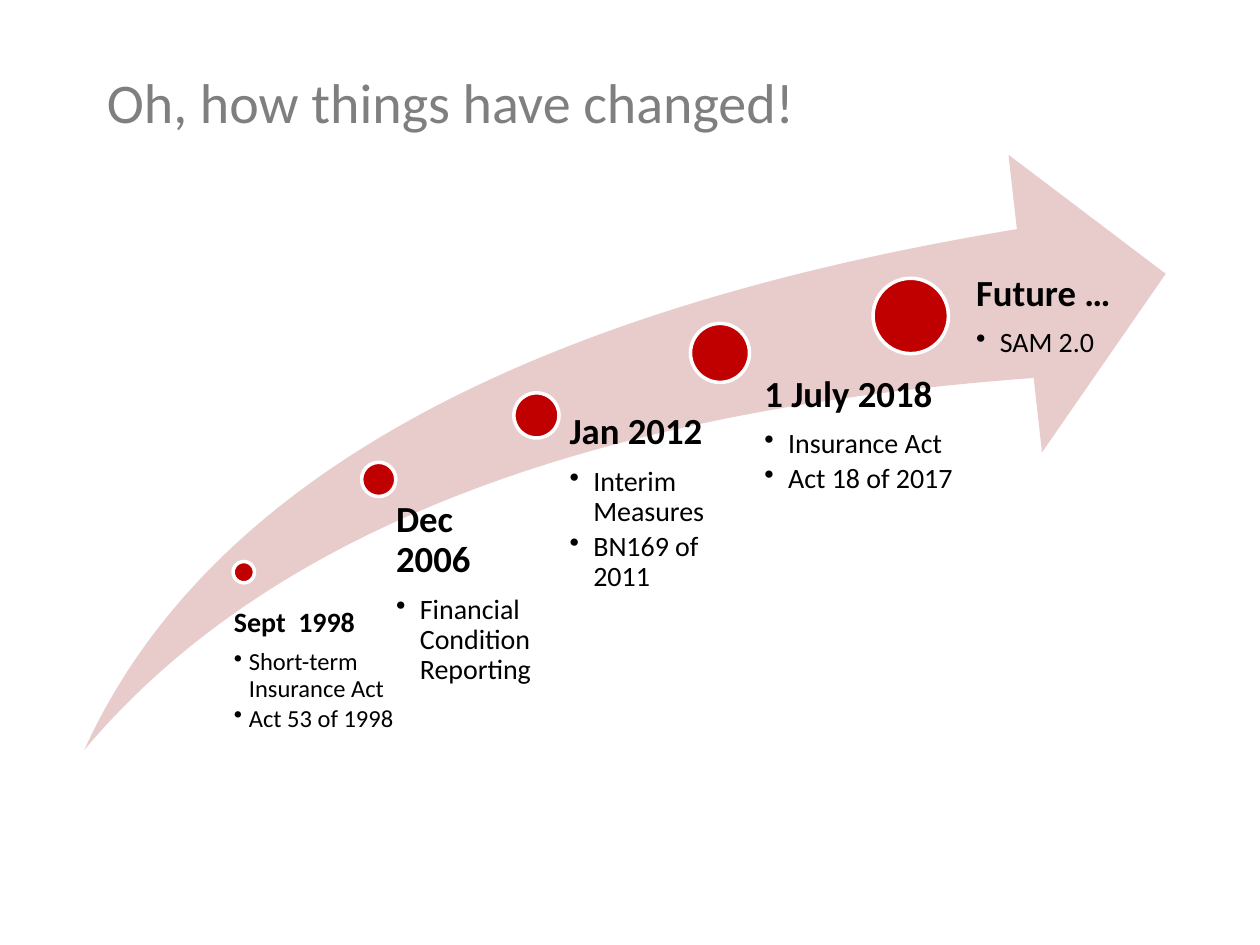
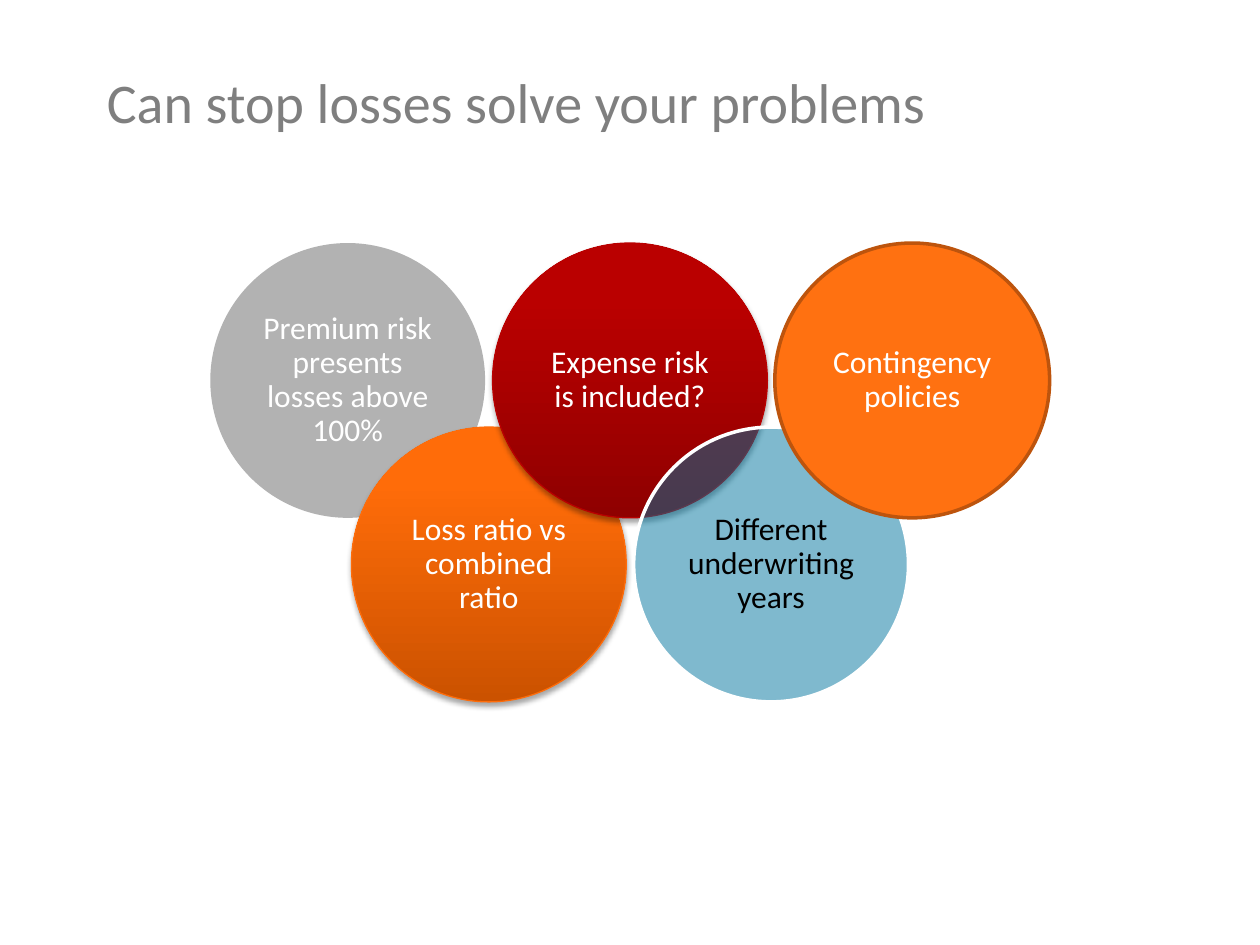
from lxml import etree
from pptx import Presentation
from pptx.dml.color import RGBColor
from pptx.enum.shapes import MSO_SHAPE
from pptx.enum.text import MSO_ANCHOR, PP_ALIGN
from pptx.oxml.ns import qn
from pptx.util import Cm, Pt

OVAL, SWOOSH = MSO_SHAPE.OVAL, MSO_SHAPE.SWOOSH_ARROW
MIDDLE, TOP = MSO_ANCHOR.MIDDLE, MSO_ANCHOR.TOP
LEFT, CENTER = PP_ALIGN.LEFT, PP_ALIGN.CENTER
TITLE_ONLY = 5
FONT = "Calibri"
COLORS = {
    "title": "7F7F7F", "text": "000000", "white": "FFFFFF",
    "swoosh": "E8CCCC", "dot": "C00000", "grey": "B2B2B2",
    "amber": "FF7111", "amber_edge": "BD540D", "teal": "00759E",
    "orange_dark": "CB5200", "orange": "FF6C09",
    "red_dark": "8F0000", "red": "BA0000", "shadow": "000000",
}

MILESTONES = [
    ((3.0, 8.2), 0.43, (2.79, 9.14, 3.86, 2.84), (16, 14, 0.3),
     "Sept  1998", ["Short-term Insurance Act", "Act 53 of 1998"]),
    ((5.59, 6.2), 0.69, (5.92, 6.98, 3.18, 5.03), (21, 16, 0.48),
     "Dec 2006", ["Financial Condition Reporting"]),
    ((8.66, 4.8), 0.91, (9.3, 5.21, 3.71, 6.76), (21, 16, 0.48),
     "Jan 2012", ["Interim Measures", "BN169 of 2011"]),
    ((12.22, 3.4), 1.19, (13.08, 4.45, 4.93, 3.15), (21, 16, 0.48),
     "1 July 2018", ["Insurance Act", "Act 18 of 2017"]),
    ((15.9, 2.49), 1.52, (17.17, 2.41, 3.84, 8.84), (21, 16, 0.48),
     "Future …", ["SAM 2.0"]),
]

QUESTIONS = [
    ("Premium risk presents losses above 100%", "white",
     {"fill": "grey"}),
    ("Loss ratio vs combined ratio", "white",
     {"gradient": ("orange_dark", "orange"), "line": "orange", "width": 0.75}),
    ("Expense risk is included?", "white",
     {"gradient": ("red_dark", "red"), "line": "red", "width": 0.75}),
    ("Different underwriting years", "text",
     {"fill": "teal", "alpha": 50, "line": "white"}),
    ("Contingency policies", "white",
     {"fill": "amber", "line": "amber_edge"}),
]


def rgb(name):
    return RGBColor.from_string(COLORS[name])


def style_text(paragraph, size, color, bold=False, align=LEFT):
    paragraph.alignment = align
    font = paragraph.font
    font.name, font.size, font.bold = FONT, Pt(size), bold
    font.color.rgb = rgb(color)


def set_frame(frame, anchor, margins):
    frame.word_wrap = True
    frame.vertical_anchor = anchor
    (frame.margin_left, frame.margin_top,
     frame.margin_right, frame.margin_bottom) = [Cm(m) for m in margins]


def add_bullet(paragraph, indent):
    properties = paragraph._p.get_or_add_pPr()
    properties.set("marL", str(Cm(indent)))
    properties.set("indent", str(-Cm(indent)))
    etree.SubElement(properties, qn("a:buChar"), char="•")


def add_soft_shadow(shape):
    effects = shape._element.spPr.find(qn("a:effectLst"))
    shadow = etree.SubElement(
        effects, qn("a:outerShdw"), blurRad=str(Pt(3.1)), dist=str(Pt(1.8)),
        dir="5400000", rotWithShape="0")
    color = etree.SubElement(shadow, qn("a:srgbClr"), val=COLORS["shadow"])
    etree.SubElement(color, qn("a:alpha"), val="35000")


def add_figure(slide, kind, box, fill=None, gradient=None, alpha=None,
               line=None, width=2):
    shape = slide.shapes.add_shape(kind, *[Cm(length) for length in box])
    shape.shadow.inherit = False
    if gradient:
        shape.fill.gradient()
        shape.fill.gradient_angle = 90
        for stop, name, position in zip(shape.fill.gradient_stops, gradient, (0, 0.8)):
            stop.color.rgb = rgb(name)
            stop.position = position
        add_soft_shadow(shape)
    else:
        shape.fill.solid()
        shape.fill.fore_color.rgb = rgb(fill)
    if alpha:
        color = shape._element.spPr.find(qn("a:solidFill")).find(qn("a:srgbClr"))
        etree.SubElement(color, qn("a:alpha"), val=str(alpha * 1000))
    if line:
        shape.line.color.rgb = rgb(line)
        shape.line.width = Pt(width)
    else:
        shape.line.fill.background()
    return shape


def add_titled_slide(deck, heading):
    slide = deck.slides.add_slide(deck.slide_layouts[TITLE_ONLY])
    title = slide.shapes.title
    title.left, title.top, title.width, title.height = Cm(1.9), Cm(0.94), Cm(21.6), Cm(2.18)
    title.text_frame.text = heading
    title.text_frame.vertical_anchor = MIDDLE
    style_text(title.text_frame.paragraphs[0], 32, "title")
    return slide


def add_milestone_label(slide, box, inset, sizes, date, events):
    date_size, event_size, indent = sizes
    frame = slide.shapes.add_textbox(*[Cm(length) for length in box]).text_frame
    set_frame(frame, TOP, (inset, 0, 0, 0))
    heading = frame.paragraphs[0]
    heading.text = date
    heading.line_spacing = 0.9
    heading.space_after = Pt(round(date_size * 0.4, 1))
    style_text(heading, date_size, "text", bold=True)
    for event in events:
        item = frame.add_paragraph()
        item.text = event
        item.level = 1
        add_bullet(item, indent)
        item.line_spacing = 0.9
        item.space_after = Pt(round(event_size * 0.15, 1))
        style_text(item, event_size, "text")


def add_timeline(slide, left, top, width, height):
    swoosh = add_figure(slide, SWOOSH, (left, top, width, height), fill="swoosh")
    swoosh.adjustments[0] = swoosh.adjustments[1] = 0.25
    for (dot_x, dot_y), dot, (x, y, w, h), sizes, date, events in MILESTONES:
        add_figure(slide, OVAL, (left + dot_x, top + dot_y, dot, dot),
                   fill="dot", line="white")
        add_milestone_label(slide, (left + x, top + y, w, h), dot * 0.53,
                            sizes, date, events)


def add_question_rings(slide, left, top, diameter, step, drop):
    for index, (question, color, look) in enumerate(QUESTIONS):
        box = (left + index * step, top + index % 2 * drop, diameter, diameter)
        frame = add_figure(slide, OVAL, box, **look).text_frame
        set_frame(frame, MIDDLE, [0.18] * 4)
        paragraph = frame.paragraphs[0]
        paragraph.text = question
        paragraph.line_spacing = 0.9
        style_text(paragraph, 18, color, align=CENTER)


def main():
    deck = Presentation()
    deck.slide_width, deck.slide_height = Cm(25.4), Cm(19.05)
    changes = add_titled_slide(deck, "Oh, how things have changed!")
    add_timeline(changes, 1.7, 3.12, 21.8, 12)
    losses = add_titled_slide(deck, "Can stop losses solve your problems")
    add_question_rings(losses, 4.24, 4.9, 5.54, 2.845, 3.71)
    deck.save("out.pptx")


if __name__ == "__main__":
    main()
